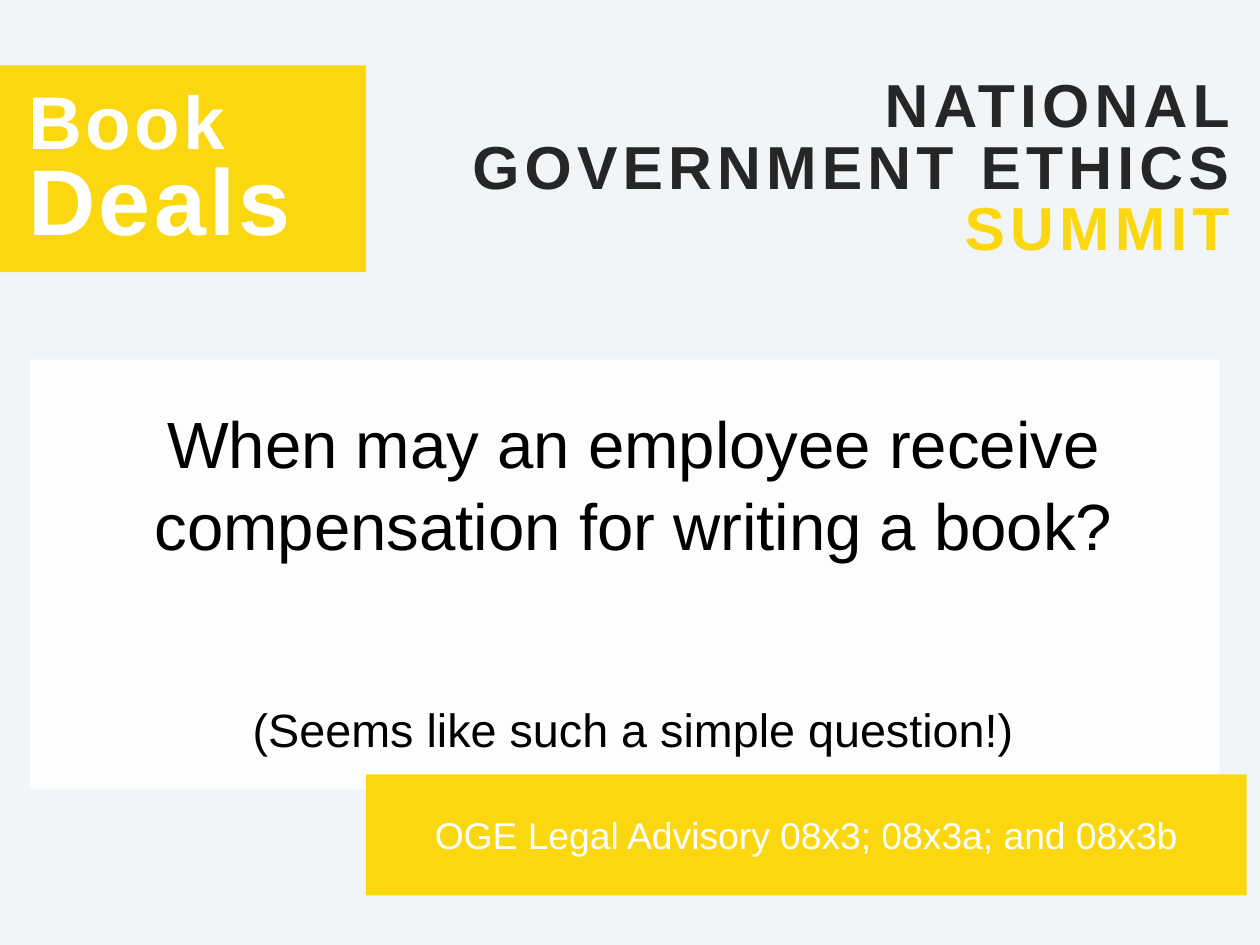
from dataclasses import dataclass

import lxml.etree
import pptx
import pptx.dml.color
import pptx.enum.shapes
import pptx.enum.text
import pptx.oxml.ns
import pptx.util

ALIGN = pptx.enum.text.PP_ALIGN
COLUMNS, ROWS = 100, 75
UNIT = pptx.util.Inches(0.075)


@dataclass(frozen=True)
class Theme:
    font: str = "Arial"
    background: str = "F1F5F7"
    accent: str = "FAD70F"
    dark: str = "262626"
    white: str = "FFFFFF"
    black: str = "000000"
    deals: int = 40
    book: int = 32
    question: int = 28
    banner: int = 26
    aside: int = 20
    source: int = 16


@dataclass(frozen=True)
class Box:
    """A rectangle in grid columns and rows."""
    column: float
    row: float
    columns: float
    rows: float

    def lengths(self) -> list[int]:
        return [round(value * UNIT) for value in (self.column, self.row, self.columns, self.rows)]


@dataclass(frozen=True)
class BannerLine:
    text: str
    columns: float
    color: str
    wrap: bool = False


THEME = Theme()
BANNER_RIGHT, BANNER_TOP, BANNER_STEP, BANNER_ROWS = 98.93, 4.67, 4.87, 7.2
BANNER = (
    BannerLine("NATIONAL", 39.47, THEME.dark, wrap=True),
    BannerLine("GOVERNMENT ETHICS", 63.73, THEME.dark),
    BannerLine("SUMMIT", 25.2, THEME.accent),
)


def rgb(color: str) -> pptx.dml.color.RGBColor:
    return pptx.dml.color.RGBColor.from_string(color)


def add_panel(slide, box: Box, color: str, opacity: int = 100):
    shape = slide.shapes.add_shape(pptx.enum.shapes.MSO_SHAPE.RECTANGLE, *box.lengths())
    shape.shadow.inherit = False
    shape.line.fill.background()
    shape.fill.solid()
    shape.fill.fore_color.rgb = rgb(color)
    if opacity < 100:
        tag = pptx.oxml.ns.qn("a:srgbClr")
        color_element = next(shape.fill._xPr.iter(tag))
        alpha = lxml.etree.SubElement(color_element, pptx.oxml.ns.qn("a:alpha"))
        alpha.set("val", str(opacity * 1000))
    return shape


def add_text_frame(slide, box: Box, wrap: bool = True):
    frame = slide.shapes.add_textbox(*box.lengths()).text_frame
    frame.word_wrap = wrap
    frame.auto_size = pptx.enum.text.MSO_AUTO_SIZE.SHAPE_TO_FIT_TEXT
    return frame


def write(frame, text: str, *, size: int, color: str, bold: bool = False,
          align=ALIGN.LEFT, tracking: float = 0, line_spacing: float = 1.0,
          space_before: float = 0) -> None:
    """Fill the empty first paragraph, or add another one; tracking is in points."""
    first = frame.paragraphs[0]
    paragraph = frame.add_paragraph() if first.runs else first
    paragraph.alignment = align
    paragraph.line_spacing = line_spacing
    paragraph.space_before = pptx.util.Pt(space_before)
    run = paragraph.add_run()
    run.text = text
    run.font.name = THEME.font
    run.font.size = pptx.util.Pt(size)
    run.font.bold = bold
    run.font.color.rgb = rgb(color)
    if tracking:
        run.font._element.set("spc", str(round(tracking * 100)))


def add_title(slide) -> None:
    add_panel(slide, Box(0, 5.2, 29.07, 16.4), THEME.accent)
    frame = add_text_frame(slide, Box(0.93, 6.67, 27.07, 14.27))
    for text, size in (("Book", THEME.book), ("Deals", THEME.deals)):
        write(frame, text, size=size, color=THEME.white, bold=True,
              tracking=1.5, line_spacing=0.8)


def add_banner(slide) -> None:
    for index, line in enumerate(BANNER):
        box = Box(BANNER_RIGHT - line.columns, BANNER_TOP + index * BANNER_STEP,
                  line.columns, BANNER_ROWS)
        write(add_text_frame(slide, box, line.wrap), line.text, size=THEME.banner,
              color=line.color, bold=True, align=ALIGN.RIGHT, tracking=2.2)


def add_question(slide) -> None:
    add_panel(slide, Box(2.4, 28.53, 94.4, 34.13), THEME.white, opacity=80)
    frame = add_text_frame(slide, Box(7.2, 31.1, 86.13, 30.13))
    write(frame, "When may an employee receive compensation for writing a book?",
          size=THEME.question, color=THEME.black, align=ALIGN.CENTER, line_spacing=1.04)
    write(frame, "(Seems like such a simple question!)", size=THEME.aside,
          color=THEME.black, align=ALIGN.CENTER, space_before=59)


def add_source(slide) -> None:
    panel = add_panel(slide, Box(29.07, 61.47, 69.87, 9.6), THEME.accent)
    panel.text_frame.vertical_anchor = pptx.enum.text.MSO_ANCHOR.MIDDLE
    write(panel.text_frame, "OGE Legal Advisory 08x3; 08x3a; and 08x3b",
          size=THEME.source, color=THEME.white, align=ALIGN.CENTER)


def main() -> None:
    presentation = pptx.Presentation()
    presentation.slide_width = COLUMNS * UNIT
    presentation.slide_height = ROWS * UNIT
    slide = presentation.slides.add_slide(presentation.slide_layouts[6])
    slide.background.fill.solid()
    slide.background.fill.fore_color.rgb = rgb(THEME.background)
    add_title(slide)
    add_banner(slide)
    add_question(slide)
    add_source(slide)
    presentation.save("out.pptx")


if __name__ == "__main__":
    main()
